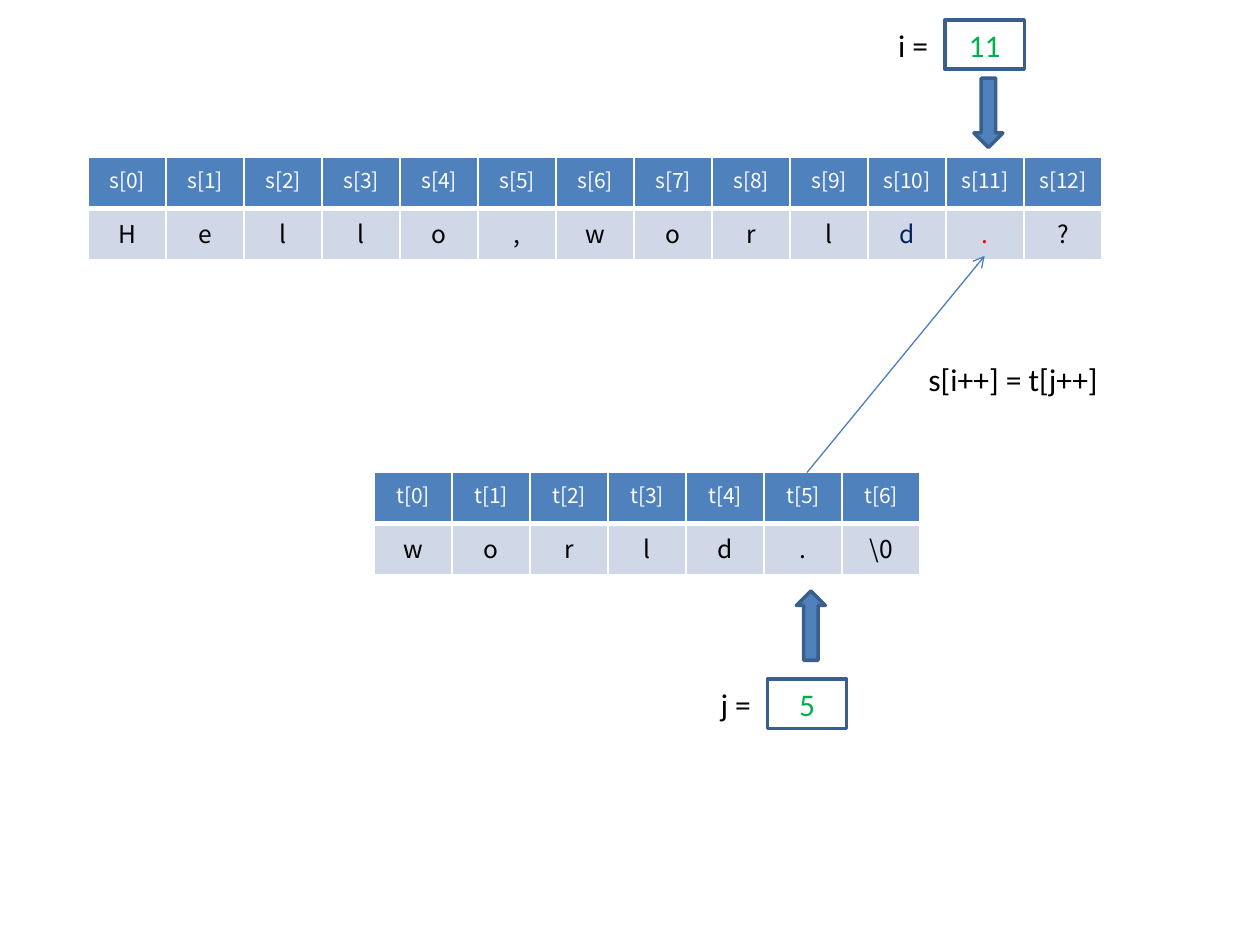
from lxml import etree
from pptx import Presentation
from pptx.dml.color import RGBColor
from pptx.enum.shapes import MSO_CONNECTOR, MSO_SHAPE
from pptx.enum.text import MSO_ANCHOR, MSO_AUTO_SIZE, PP_ALIGN
from pptx.oxml.ns import qn
from pptx.util import Inches, Pt

RECTANGLE, DOWN_ARROW = MSO_SHAPE.RECTANGLE, MSO_SHAPE.DOWN_ARROW
STRAIGHT = MSO_CONNECTOR.STRAIGHT
CENTER, MIDDLE = PP_ALIGN.CENTER, MSO_ANCHOR.MIDDLE
FIT_SHAPE = MSO_AUTO_SIZE.SHAPE_TO_FIT_TEXT

WHITE = RGBColor(0xFF, 0xFF, 0xFF)
BLACK = RGBColor(0x00, 0x00, 0x00)
BLUE = RGBColor(0x4F, 0x81, 0xBD)
DARK_BLUE = RGBColor(0x3A, 0x5F, 0x8C)
LINE_BLUE = RGBColor(0x4B, 0x7E, 0xBC)
PALE_BLUE = RGBColor(0xD0, 0xD8, 0xE8)
NAVY = RGBColor(0x00, 0x20, 0x60)
RED = RGBColor(0xFF, 0x00, 0x00)
GREEN = RGBColor(0x00, 0xB0, 0x50)

TEXT_FONT, ARRAY_FONT = "Calibri", "Noto Sans CJK JP"

# Grid in inches: both arrays share the cell size
CELL_W, CELL_H = 8.05 / 13, 0.405
S_TOP, T_TOP = 1.25, 3.75
BOX_W, BOX_H = 0.63, 0.39
ARROW_W, ARROW_H = 0.23, 0.55
ARROW_SHIFT = 0.03
LABEL_GAP = 0.47
I_BOX = (7.5, 0.16)
J_BOX = (6.09, 5.39)


def inches(*lengths):
    return [Inches(length) for length in lengths]


def set_font(paragraph, name, size, color):
    paragraph.font.name = name
    paragraph.font.size = Pt(size)
    paragraph.font.bold = False
    paragraph.font.color.rgb = color


def set_borders(cell, bottom_width):
    """Draw white borders; they must come before the fill in the cell."""
    properties = cell._tc.get_or_add_tcPr()
    widths = {"a:lnL": 1, "a:lnR": 1, "a:lnT": 1, "a:lnB": bottom_width}
    for position, (tag, width) in enumerate(widths.items()):
        border = etree.Element(qn(tag), w=str(Pt(width)))
        fill = etree.SubElement(border, qn("a:solidFill"))
        etree.SubElement(fill, qn("a:srgbClr"), val=str(WHITE))
        properties.insert(position, border)


def format_cell(cell, text, size, color, fill, bottom_width):
    cell.text = text
    cell.fill.solid()
    cell.fill.fore_color.rgb = fill
    set_borders(cell, bottom_width)
    paragraph = cell.text_frame.paragraphs[0]
    paragraph.alignment = CENTER
    set_font(paragraph, ARRAY_FONT, size, color)


def add_array(slide, name, values, left, top, highlights):
    """Indexes in the header row, characters in the row below."""
    count = len(values)
    frame = slide.shapes.add_table(
        2, count, *inches(left, top, count * CELL_W, 2 * CELL_H))
    table = frame.table
    for index, value in enumerate(values):
        format_cell(table.cell(0, index), f"{name}[{index}]", 12, WHITE, BLUE, 3)
        format_cell(table.cell(1, index), value, 14,
                    highlights.get(index, BLACK), PALE_BLUE, 1)


def add_outlined(slide, kind, left, top, width, height, fill):
    shape = slide.shapes.add_shape(kind, *inches(left, top, width, height))
    shape.shadow.inherit = False
    shape.fill.solid()
    shape.fill.fore_color.rgb = fill
    shape.line.color.rgb = DARK_BLUE
    shape.line.width = Pt(2)
    return shape


def add_label(slide, text, left, top, width):
    label = slide.shapes.add_textbox(*inches(left, top, width, 0.4))
    frame = label.text_frame
    frame.word_wrap = False
    frame.auto_size = FIT_SHAPE
    frame.text = text
    set_font(frame.paragraphs[0], TEXT_FONT, 18, BLACK)


def add_counter(slide, name, value, box, arrow_top, rotation):
    """A labelled value box with a block arrow pointing at its array."""
    left, top = box
    arrow_left = left + (BOX_W - ARROW_W) / 2 + ARROW_SHIFT
    arrow = add_outlined(slide, DOWN_ARROW, arrow_left, arrow_top,
                         ARROW_W, ARROW_H, BLUE)
    arrow.rotation = rotation

    value_box = add_outlined(slide, RECTANGLE, left, top, BOX_W, BOX_H, WHITE)
    frame = value_box.text_frame
    frame.vertical_anchor = MIDDLE
    frame.text = value
    frame.paragraphs[0].alignment = CENTER
    set_font(frame.paragraphs[0], TEXT_FONT, 18, GREEN)

    add_label(slide, f"{name} =", left - LABEL_GAP, top, 0.45)


def add_copy_arrow(slide, start, end):
    connector = slide.shapes.add_connector(STRAIGHT, *inches(*start, *end))
    connector.line.color.rgb = LINE_BLUE
    connector.line.width = Pt(0.75)
    etree.SubElement(connector.line._get_or_add_ln(), qn("a:tailEnd"), type="arrow")
    etree.SubElement(connector._element.spPr, qn("a:effectLst"))


def main():
    presentation = Presentation()
    presentation.slide_width, presentation.slide_height = inches(10, 7.5)
    slide = presentation.slides.add_slide(presentation.slide_layouts[6])

    # Target and source arrays
    add_array(slide, "s", "Hello,world.?", 0.7, S_TOP, {10: NAVY, 11: RED})
    add_array(slide, "t", [*"world.", "\\0"], 2.97, T_TOP, {})

    # Counters
    add_counter(slide, "i", "11", I_BOX, 0.62, 0)
    add_counter(slide, "j", "5", J_BOX, 4.69, 180)

    # Copy step from t to s
    add_label(slide, "s[i++] = t[j++]", 7.27, 2.81, 1.56)
    add_copy_arrow(slide, (J_BOX[0] + BOX_W / 2, T_TOP),
                   (I_BOX[0] + BOX_W / 2, 2.03))

    presentation.save("out.pptx")


if __name__ == "__main__":
    main()
